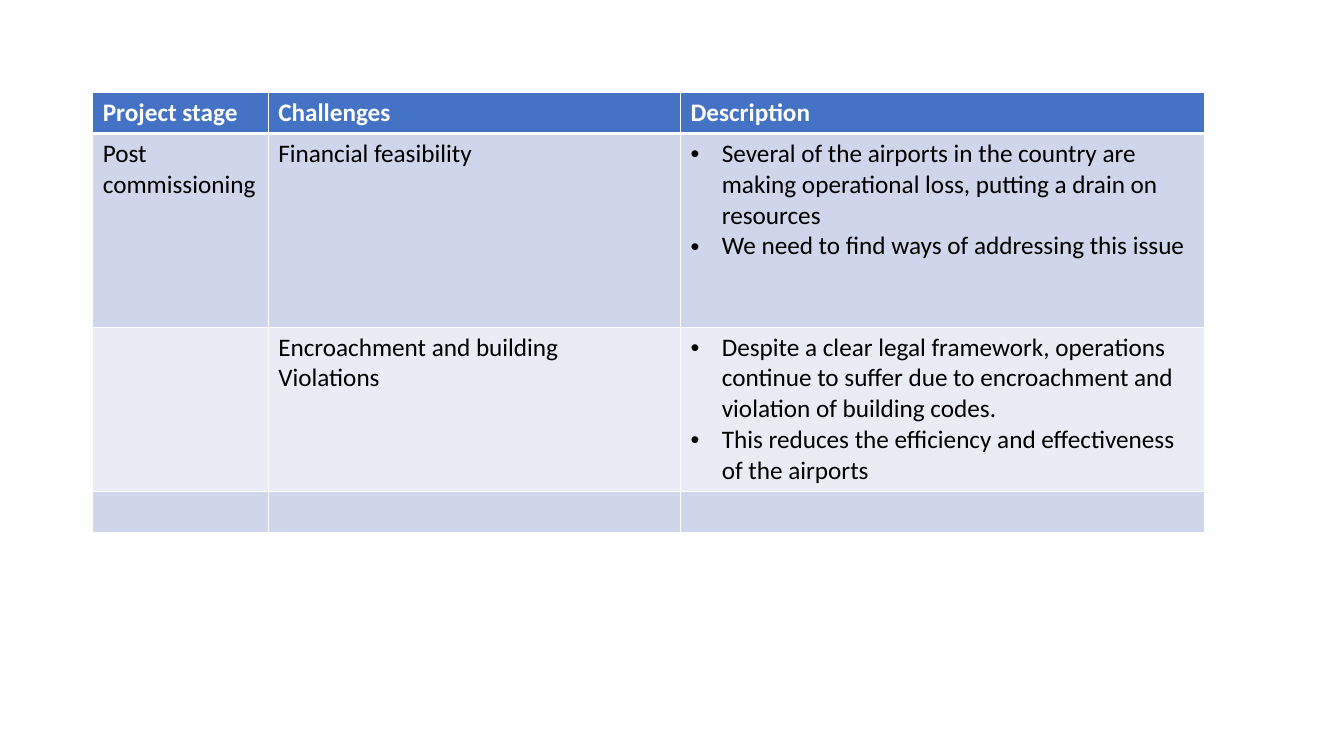
from lxml.etree import SubElement
from pptx import Presentation
from pptx.dml.color import RGBColor
from pptx.oxml.ns import qn
from pptx.util import Inches, Pt

WHITE = RGBColor(0xFF, 0xFF, 0xFF)
BLACK = RGBColor(0, 0, 0)
HEADER_BLUE = RGBColor(0x44, 0x72, 0xC4)
BAND_DARK = RGBColor(0xCF, 0xD5, 0xEA)
BAND_LIGHT = RGBColor(0xE9, 0xEB, 0xF5)

COLUMN_WIDTHS = [1.74, 4.09, 5.2]
ROW_HEIGHTS = [0.4, 1.92, 1.63, 0.4]
DESCRIPTION_COLUMN = 2
ROWS = [
    ["Project stage", "Challenges", "Description"],
    [
        "Post\ncommissioning",
        "Financial feasibility",
        "Several of the airports in the country are making operational loss, "
        "putting a drain on resources\n"
        "We need to find ways of addressing this issue",
    ],
    [
        "",
        "Encroachment and building\nViolations",
        "Despite a clear legal framework, operations continue to suffer due to "
        "encroachment and violation of building codes.\n"
        "This reduces the efficiency and effectiveness of the airports",
    ],
    ["", "", ""],
]


def add_borders(cell, top, bottom):
    """Draw white lines round a cell, with top and bottom widths in points."""
    properties = cell._tc.get_or_add_tcPr()
    for side, width in (("L", 1), ("R", 1), ("T", top), ("B", bottom)):
        line = SubElement(properties, qn(f"a:ln{side}"), w=str(Pt(width)))
        fill = SubElement(line, qn("a:solidFill"))
        SubElement(fill, qn("a:srgbClr"), val=str(WHITE))


def add_bullet(para):
    """Give a paragraph a bullet and a hanging indent."""
    properties = para._p.get_or_add_pPr()
    indent = Inches(0.31)
    properties.set("marL", str(indent))
    properties.set("indent", str(-indent))
    SubElement(properties, qn("a:buFont"), typeface="Arial")
    SubElement(properties, qn("a:buChar"), char="•")


def write_cell(cell, text, color, bold, bulleted):
    """Write the lines of a cell as formatted paragraphs."""
    cell.text_frame.text = text
    for para in cell.text_frame.paragraphs:
        para.font.size = Pt(18)
        if bulleted:
            add_bullet(para)
        for span in para.runs:
            span.font.name = "Calibri"
            span.font.size = Pt(18)
            span.font.bold = bold
            span.font.color.rgb = color


def style_cell(cell, row):
    """Set the borders and the banded fill that belong to a row."""
    add_borders(cell, 3 if row == 1 else 1, 3 if row == 0 else 1)
    cell.fill.solid()
    band = BAND_DARK if row % 2 else BAND_LIGHT
    cell.fill.fore_color.rgb = HEADER_BLUE if row == 0 else band


def add_challenges_table(page):
    """Add the table of project stages and challenges."""
    frame = page.shapes.add_table(
        len(ROWS), len(COLUMN_WIDTHS), Inches(0.92), Inches(0.92),
        Inches(sum(COLUMN_WIDTHS)), Inches(sum(ROW_HEIGHTS)))
    table = frame.table
    for column, width in zip(table.columns, COLUMN_WIDTHS):
        column.width = Inches(width)
    for row, height in zip(table.rows, ROW_HEIGHTS):
        row.height = Inches(height)
    for row, texts in enumerate(ROWS):
        is_header = row == 0
        for column, text in enumerate(texts):
            cell = table.cell(row, column)
            bulleted = column == DESCRIPTION_COLUMN and not is_header and text != ""
            write_cell(cell, text, WHITE if is_header else BLACK, is_header, bulleted)
            style_cell(cell, row)


def main():
    """Build the slide and save the deck."""
    deck = Presentation()
    deck.slide_width = Inches(13.33)
    deck.slide_height = Inches(7.5)
    page = deck.slides.add_slide(deck.slide_layouts[6])
    add_challenges_table(page)
    deck.save("out.pptx")


if __name__ == "__main__":
    main()
